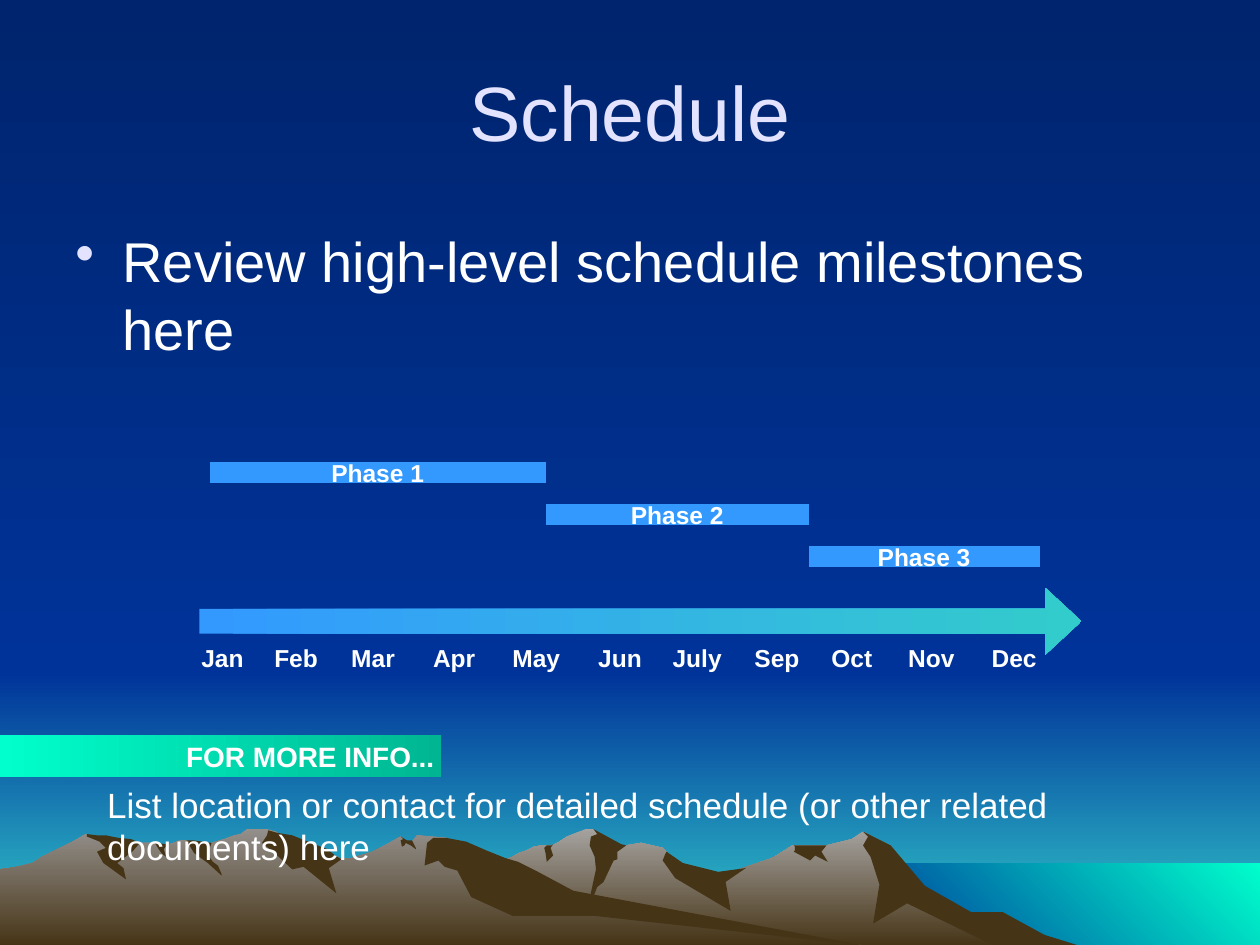
from lxml import etree
from pptx import Presentation
from pptx import util as u
from pptx.dml.color import RGBColor
from pptx.enum import shapes, text
from pptx.oxml import ns

FONT = "Arial"
NIGHT = RGBColor(0x00, 0x24, 0x6D)
NAVY = RGBColor(0x00, 0x33, 0x99)
TEAL = RGBColor(0x33, 0xCC, 0xCC)
MINT = RGBColor(0x00, 0xFF, 0xCC)
GREEN = RGBColor(0x00, 0xB6, 0x92)
BLUE = RGBColor(0x33, 0x99, 0xFF)
EARTH = RGBColor(0x46, 0x34, 0x16)
STONE = RGBColor(0xA5, 0xA2, 0x9F)
ASH = RGBColor(0x93, 0x8F, 0x8B)
LILAC = RGBColor(0xE3, 0xE3, 0xFF)
WHITE = RGBColor(0xFF, 0xFF, 0xFF)

WIDTH, HEIGHT = 25.4, 19.05
POINT_UNIT = u.Cm(0.0254)  # ridge points are hundredths of an inch

RIGHT_RANGE = [
    (802, 740), (778, 727), (764, 723), (723, 698), (702, 671), (685, 660), (676, 666),
    (656, 671), (629, 671), (613, 681), (566, 697), (536, 690), (529, 676), (526, 673),
    (509, 669), (497, 671), (486, 673), (474, 661), (471, 658), (465, 658), (450, 664),
    (444, 668), (438, 671), (430, 671), (424, 672), (418, 675), (412, 677), (405, 681),
    (399, 683), (394, 685), (355, 698), (327, 709), (277, 739), (258, 751), (821, 751)]
RIGHT_SHADOWS = [
    [(796, 724), (771, 724), (734, 703), (707, 671), (685, 660), (689, 664), (685, 671),
     (691, 680), (698, 702), (693, 733), (720, 717), (792, 752), (858, 751), (829, 742)],
    [(471, 658), (474, 662), (469, 664), (468, 671), (472, 680), (473, 690), (465, 727),
     (474, 704), (479, 700), (487, 683), (490, 682), (490, 676), (497, 671), (493, 670)],
    [(529, 676), (528, 678), (526, 683), (536, 697), (580, 723), (576, 700), (592, 689),
     (570, 692), (542, 685)],
    [(650, 671), (630, 671), (631, 672), (631, 675), (630, 676), (643, 683), (647, 679),
     (657, 684), (652, 676), (656, 671)],
    [(433, 677), (432, 673), (434, 671), (438, 671), (439, 670), (437, 673), (439, 679),
     (434, 684)]]
LEFT_RANGE = [
    (690, 751), (667, 748), (432, 712), (354, 665), (331, 663), (327, 668), (323, 668),
    (318, 664), (296, 676), (279, 681), (271, 682), (260, 676), (236, 681), (223, 663),
    (219, 660), (212, 658), (196, 658), (191, 662), (186, 663), (178, 666), (168, 669),
    (160, 671), (148, 667), (143, 667), (132, 671), (128, 671), (123, 669), (111, 669),
    (94, 671), (68, 662), (56, 669), (50, 672), (46, 674), (35, 679), (26, 685),
    (14, 688), (0, 690), (0, 751)]
LEFT_SHADOWS = [
    [(212, 663), (208, 669), (219, 678), (232, 690), (241, 688), (267, 709), (261, 689),
     (271, 682), (266, 679), (260, 674), (252, 671), (232, 663), (220, 661), (213, 659)],
    [(370, 668), (354, 665), (344, 665), (339, 669), (337, 687), (348, 683), (353, 688),
     (363, 691), (374, 712), (407, 727), (472, 727), (690, 751), (683, 750), (455, 707),
     (427, 692), (411, 684), (401, 681), (386, 675)],
    [(318, 667), (320, 666), (318, 664), (323, 667), (327, 667), (330, 673), (330, 674),
     (326, 671), (322, 669), (321, 671), (319, 672)],
    [(154, 667), (161, 668), (168, 669), (165, 677), (166, 680), (169, 684), (173, 687),
     (176, 694), (176, 695), (165, 685), (154, 677), (148, 667)],
    [(133, 670), (130, 674), (132, 680), (129, 678), (126, 674), (123, 669)],
    [(109, 668), (111, 669), (105, 676), (93, 685), (98, 689), (100, 698), (82, 685),
     (77, 676), (84, 673), (79, 668), (69, 664), (69, 662), (77, 663), (84, 663),
     (94, 665), (104, 666)]]

# name, left and width within the schedule
MONTHS = [("Jan", 0, 1.4), ("Feb", 1.47, 1.4), ("Mar", 3.02, 1.42), ("Apr", 4.67, 1.4),
          ("May", 6.27, 1.5), ("Jun", 8, 1.42), ("July", 9.5, 1.52), ("Sep", 11.15, 1.45),
          ("Oct", 12.7, 1.4), ("Nov", 14.25, 1.47), ("Dec", 15.93, 1.45)]
PHASES = [("Phase 1", 0.42, 6.77), ("Phase 2", 7.2, 5.29), ("Phase 3", 12.49, 4.66)]


def paint(fill, colors, angle=90):
    """Fill with one colour, or a two-colour gradient at a clockwise angle."""
    if isinstance(colors, RGBColor):
        fill.solid()
        fill.fore_color.rgb = colors
        return
    fill.gradient()
    fill.gradient_angle = (360 - angle) % 360
    for stop, color, position in zip(fill.gradient_stops, colors, (0, 1)):
        stop.color.rgb = color
        stop.position = position


def finish(shape, colors, angle=90):
    paint(shape.fill, colors, angle)
    shape.line.fill.background()
    shape.shadow.inherit = False
    return shape


def add_block(page, kind, box, colors, angle=90):
    return finish(page.shapes.add_shape(kind, *map(u.Cm, box)), colors, angle)


def add_outline(page, left, top, points, colors):
    builder = page.shapes.build_freeform(*points[0], scale=POINT_UNIT)
    builder.add_line_segments(points[1:], close=True)
    finish(builder.convert_to_shape(u.Cm(left), u.Cm(top)), colors)


def write(shape, words, size, color=WHITE, bold=False, align=text.PP_ALIGN.LEFT,
          anchor=text.MSO_ANCHOR.TOP, wrap=True, grow=False):
    frame = shape.text_frame
    frame.word_wrap = wrap
    frame.vertical_anchor = anchor
    if grow:
        frame.auto_size = text.MSO_AUTO_SIZE.SHAPE_TO_FIT_TEXT
    para = frame.paragraphs[0]
    para.alignment = align
    span = para.add_run()
    span.text = words
    span.font.name = FONT
    span.font.size = u.Pt(size)
    span.font.bold = bold
    span.font.color.rgb = color
    return para


def add_words(page, box, words, size, **style):
    return write(page.shapes.add_textbox(*map(u.Cm, box)), words, size, **style)


def add_bullet(para, color):
    props = para._p.get_or_add_pPr()
    props.set("marL", str(u.Cm(0.95)))
    props.set("indent", str(-u.Cm(0.95)))
    tint = etree.SubElement(props, ns.qn("a:buClr"))
    etree.SubElement(tint, ns.qn("a:srgbClr"), val=str(color))
    etree.SubElement(props, ns.qn("a:buFontTx"))
    etree.SubElement(props, ns.qn("a:buChar"), char="•")


def draw_landscape(page, left, top, width, height):
    rect = shapes.MSO_SHAPE.RECTANGLE
    horizon = 13.55
    add_block(page, rect, (left, top + horizon, width, height - horizon), (NAVY, TEAL))
    add_block(page, rect, (left, top, width, horizon), (NIGHT, NAVY))
    add_block(page, rect, (left + 17.35, top + 17.4, width - 17.35, 1.7), (NAVY, MINT), 315)
    for ridge, light, shadows in ((RIGHT_RANGE, STONE, RIGHT_SHADOWS),
                                  (LEFT_RANGE, ASH, LEFT_SHADOWS)):
        add_outline(page, left, top, ridge, (light, EARTH))
        for shadow in shadows:
            add_outline(page, left, top, shadow, EARTH)


def draw_headings(page, left, top, width):
    add_words(page, (left, top, width, 3.18), "Schedule", 44, color=LILAC,
              align=text.PP_ALIGN.CENTER, anchor=text.MSO_ANCHOR.MIDDLE)
    para = add_words(page, (left, top + 3.81, width, 12.5),
                     "Review high-level schedule milestones here", 32)
    para.space_before = u.Pt(6.4)
    add_bullet(para, LILAC)


def draw_more_info(page, left, top):
    banner = add_block(page, shapes.MSO_SHAPE.RECTANGLE, (left, top, 8.89, 0.85),
                       (MINT, GREEN), 0)
    frame = banner.text_frame
    frame.margin_left = frame.margin_right = u.Cm(0.13)
    write(banner, "FOR MORE INFO...", 16, bold=True, align=text.PP_ALIGN.RIGHT,
          anchor=text.MSO_ANCHOR.MIDDLE, wrap=False)
    para = add_words(page, (left + 1.91, top + 0.85, 21.59, 2.54), "List location or contact "
                     "for detailed schedule (or other related documents) here", 20)
    para.space_before = u.Pt(4)


def draw_schedule(page, left, top):
    arrow = add_block(page, shapes.MSO_SHAPE.RIGHT_ARROW,
                      (left + 0.21, top + 2.54, 17.78, 1.35), (BLUE, TEAL), 0)
    arrow.adjustments[0] = 0.37
    arrow.adjustments[1] = 0.54
    for month, offset, width in MONTHS:
        add_words(page, (left + offset, top + 3.52, width, 0.85), month, 14,
                  bold=True, wrap=False, grow=True)
    for row, (phase, offset, width) in enumerate(PHASES):
        bar = add_block(page, shapes.MSO_SHAPE.FLOWCHART_PROCESS,
                        (left + offset, top + row * 0.85, width, 0.42), BLUE)
        write(bar, phase, 14, bold=True, align=text.PP_ALIGN.CENTER,
              anchor=text.MSO_ANCHOR.MIDDLE, wrap=False)


def main():
    deck = Presentation()
    deck.slide_width, deck.slide_height = u.Cm(WIDTH), u.Cm(HEIGHT)
    page = deck.slides.add_slide(deck.slide_layouts[6])
    paint(page.background.fill, (NIGHT, NAVY))
    draw_landscape(page, 0, 0, WIDTH, HEIGHT)
    draw_headings(page, 1.27, 0.64, 22.86)
    draw_more_info(page, 0, 14.82)
    draw_schedule(page, 3.81, 9.31)
    deck.save("out.pptx")


if __name__ == "__main__":
    main()
